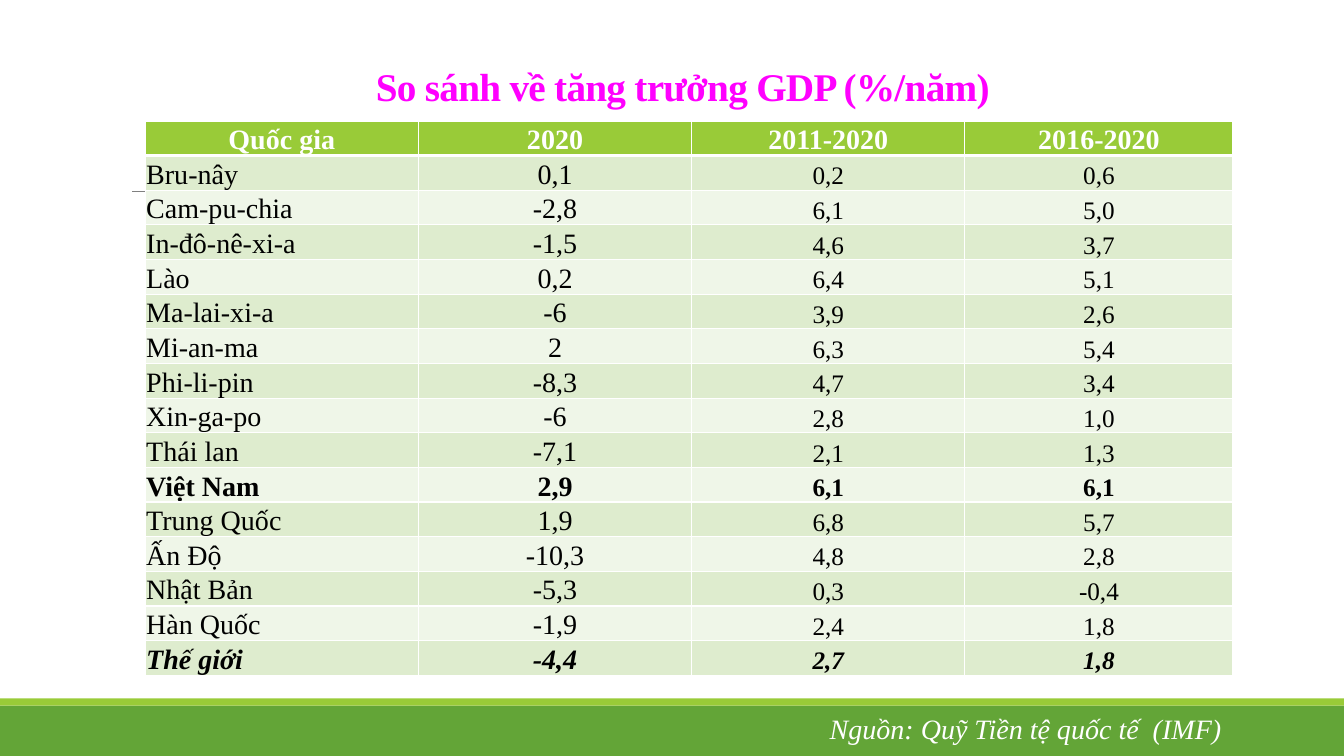
from lxml import etree
from pptx import Presentation
from pptx.dml.color import RGBColor
from pptx.enum.shapes import MSO_CONNECTOR, MSO_SHAPE
from pptx.enum.text import MSO_ANCHOR, MSO_AUTO_SIZE, PP_ALIGN
from pptx.oxml.ns import qn
from pptx.util import Inches, Pt

RECTANGLE = MSO_SHAPE.RECTANGLE
STRAIGHT = MSO_CONNECTOR.STRAIGHT
TOP, BOTTOM = MSO_ANCHOR.TOP, MSO_ANCHOR.BOTTOM
LEFT, CENTER = PP_ALIGN.LEFT, PP_ALIGN.CENTER
FIT_SHAPE = MSO_AUTO_SIZE.SHAPE_TO_FIT_TEXT

COLORS = {
    "white": "FFFFFF",
    "black": "000000",
    "magenta": "FF00FF",
    "gray": "808080",
    "green": "63A537",
    "lime": "99CB38",
    "dark band": "DEECCE",
    "light band": "EFF6E8",
}

HEADER = ("Quốc gia", "2020", "2011-2020", "2016-2020")
GROWTH = [
    ("Bru-nây", "0,1", "0,2", "0,6"),
    ("Cam-pu-chia", "-2,8", "6,1", "5,0"),
    ("In-đô-nê-xi-a", "-1,5", "4,6", "3,7"),
    ("Lào", "0,2", "6,4", "5,1"),
    ("Ma-lai-xi-a", "-6", "3,9", "2,6"),
    ("Mi-an-ma", "2", "6,3", "5,4"),
    ("Phi-li-pin", "-8,3", "4,7", "3,4"),
    ("Xin-ga-po", "-6", "2,8", "1,0"),
    ("Thái lan", "-7,1", "2,1", "1,3"),
    ("Việt Nam", "2,9", "6,1", "6,1"),
    ("Trung Quốc", "1,9", "6,8", "5,7"),
    ("Ấn Độ", "-10,3", "4,8", "2,8"),
    ("Nhật Bản", "-5,3", "0,3", "-0,4"),
    ("Hàn Quốc", "-1,9", "2,4", "1,8"),
    ("Thế giới", "-4,4", "2,7", "1,8"),
]
BOLD_ROWS = ("Quốc gia", "Việt Nam", "Thế giới")
ITALIC_ROWS = ("Thế giới",)


class SlideBuilder:
    font_name = "Times New Roman"

    def __init__(self, slide):
        self.slide = slide

    def color(self, name):
        return RGBColor.from_string(COLORS[name])

    def fill(self, target, color):
        target.fill.solid()
        target.fill.fore_color.rgb = self.color(color)

    def add_text(self, paragraph, text, size, color, bold=False, italic=False,
                 align=LEFT):
        paragraph.alignment = align
        run = paragraph.add_run()
        run.text = text
        font = run.font
        font.name, font.size = self.font_name, Pt(size)
        font.bold, font.italic = bold, italic
        font.color.rgb = self.color(color)
        return run

    def bar(self, left, top, width, height, color):
        shape = self.slide.shapes.add_shape(
            RECTANGLE, Inches(left), Inches(top), Inches(width), Inches(height))
        shape.shadow.inherit = False
        self.fill(shape, color)
        shape.line.fill.background()

    def line(self, left, right, y, color, width):
        connector = self.slide.shapes.add_connector(
            STRAIGHT, Inches(left), Inches(y), Inches(right), Inches(y))
        connector.line.color.rgb = self.color(color)
        connector.line.width = Pt(width)
        etree.SubElement(connector.element.spPr, qn("a:effectLst"))

    def text_box(self, left, top, width, height, anchor=TOP, wrap=True):
        box = self.slide.shapes.add_textbox(
            Inches(left), Inches(top), Inches(width), Inches(height))
        box.text_frame.word_wrap = wrap
        box.text_frame.vertical_anchor = anchor
        return box

    def borders(self, cell, widths):
        properties = cell._tc.get_or_add_tcPr()
        for position, (side, width) in enumerate(widths.items()):
            border = etree.Element(qn(f"a:ln{side}"), w=str(Pt(width)))
            solid = etree.SubElement(border, qn("a:solidFill"))
            etree.SubElement(solid, qn("a:srgbClr"), val=COLORS["white"])
            properties.insert(position, border)

    def table(self, left, top, column_widths, row_height, rows):
        table = self.slide.shapes.add_table(
            len(rows), len(column_widths), Inches(left), Inches(top),
            Inches(sum(column_widths)), Inches(row_height * len(rows))).table
        for column, width in zip(table.columns, column_widths):
            column.width = Inches(width)
        for row_index, values in enumerate(rows):
            table.rows[row_index].height = Inches(row_height)
            for column_index, value in enumerate(values):
                self.table_cell(table.cell(row_index, column_index), value,
                                row_index, column_index, values[0])

    def table_cell(self, cell, value, row, column, row_name):
        is_header = row == 0
        band = "dark band" if row % 2 else "light band"
        self.fill(cell, "lime" if is_header else band)
        cell.vertical_anchor = BOTTOM
        cell.margin_left = cell.margin_right = cell.margin_top = Inches(0.01)
        cell.margin_bottom = 0
        self.add_text(cell.text_frame.paragraphs[0], value,
                      size=20 if is_header or column < 2 else 18,
                      color="white" if is_header else "black",
                      bold=row_name in BOLD_ROWS,
                      italic=row_name in ITALIC_ROWS,
                      align=CENTER if is_header or column else LEFT)
        self.borders(cell, {"L": 1, "R": 1, "T": 3 if row == 1 else 1,
                            "B": 3 if is_header else 1})


def main():
    presentation = Presentation()
    presentation.slide_width = Inches(13.33)
    presentation.slide_height = Inches(7.5)
    builder = SlideBuilder(
        presentation.slides.add_slide(presentation.slide_layouts[6]))

    # Footer bars and rule
    builder.bar(0, 7, 13.33, 0.5, "green")
    builder.bar(0, 6.93, 13.33, 0.07, "lime")
    builder.line(1.31, 12.21, 1.9, "gray", 0.5)

    # Title
    title = builder.text_box(0.97, 0.28, 11.6, 0.85, anchor=BOTTOM)
    builder.fill(title, "white")
    paragraph = title.text_frame.paragraphs[0]
    paragraph.line_spacing = 1.5
    run = builder.add_text(paragraph, "So sánh về tăng trưởng GDP (%/năm)",
                           28, "magenta", bold=True, align=CENTER)
    run.font._element.set("spc", "-50")

    # Growth table
    builder.table(1.44, 1.2, (2.71, 2.71, 2.71, 2.66), 0.33, [HEADER] + GROWTH)

    # Source of the figures
    source = builder.text_box(8.13, 7.01, 4.12, 0.44, wrap=False)
    source.text_frame.auto_size = FIT_SHAPE
    builder.add_text(source.text_frame.paragraphs[0],
                     "Nguồn: Quỹ Tiền tệ quốc tế  (IMF)", 20, "white",
                     italic=True)

    presentation.save("out.pptx")


if __name__ == "__main__":
    main()
